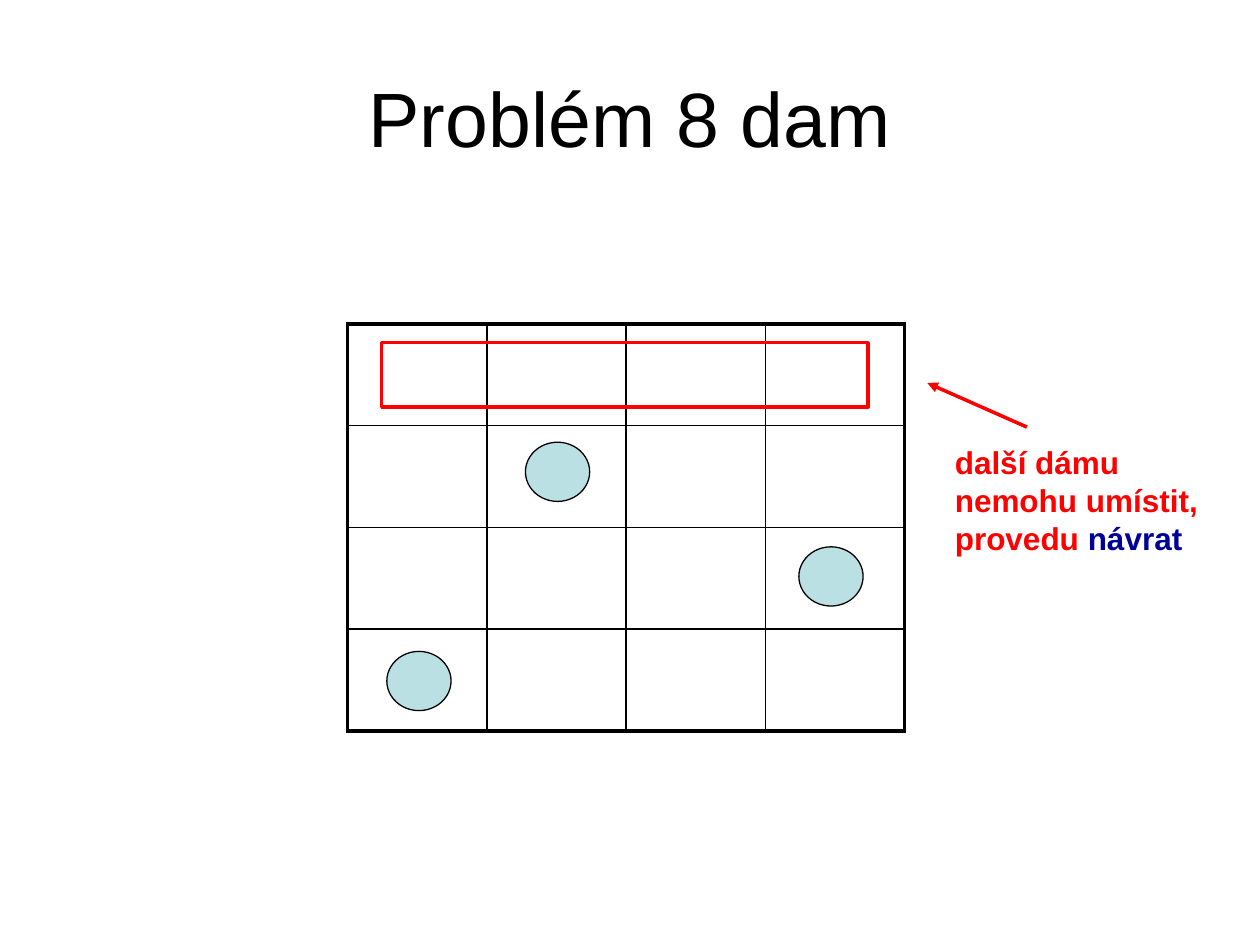
from lxml import etree
from pptx import Presentation
from pptx.dml.color import RGBColor
from pptx.enum import shapes, text
from pptx.oxml import ns
from pptx.util import Inches, Pt

BLACK, RED, NAVY, QUEEN = "000000", "FF0000", "000099", "BBE0E3"
SIZE = 4


def paint(color_format, color):
    color_format.rgb = RGBColor.from_string(color)


def add_child(parent, tag, **attributes):
    return etree.SubElement(parent, ns.qn(tag), attributes)


presentation = Presentation()
presentation.slide_width, presentation.slide_height = Inches(10), Inches(7.5)
slide = presentation.slides.add_slide(presentation.slide_layouts[6])

# Title
title = slide.shapes.add_textbox(Inches(0.5), Inches(0.3), Inches(9), Inches(1.25))
title.text_frame.word_wrap = True
title.text_frame.vertical_anchor = text.MSO_ANCHOR.MIDDLE
title.text_frame.text = "Problém 8 dam"
paragraph = title.text_frame.paragraphs[0]
paragraph.alignment = text.PP_ALIGN.CENTER
font = paragraph.runs[0].font
font.name, font.size = "Arial", Pt(44)
paint(font.color, BLACK)

# Chessboard with a thick outer border
board = slide.shapes.add_table(
    SIZE, SIZE, Inches(2.76), Inches(2.57), Inches(4.42), Inches(3.23)).table
board.first_row = board.horz_banding = False
for row in range(SIZE):
    for column in range(SIZE):
        cell = board.cell(row, column)
        properties = cell._tc.get_or_add_tcPr()
        outer_sides = {"a:lnL": column == 0, "a:lnR": column == SIZE - 1,
                       "a:lnT": row == 0, "a:lnB": row == SIZE - 1}
        for side, is_outer in outer_sides.items():
            border = add_child(properties, side, w=str(Pt(2.25 if is_outer else 1)))
            add_child(add_child(border, "a:solidFill"), "a:srgbClr", val=BLACK)
        cell.fill.background()

# Queens placed so far
for left, top in [(3.07, 5.17), (6.34, 4.34), (4.17, 3.51)]:
    queen = slide.shapes.add_shape(
        shapes.MSO_SHAPE.OVAL, Inches(left), Inches(top), Inches(0.51), Inches(0.47))
    queen.shadow.inherit = False
    queen.fill.solid()
    paint(queen.fill.fore_color, QUEEN)
    paint(queen.line.color, BLACK)
    queen.line.width = Pt(0.75)

# Frame around the blocked row
frame = slide.shapes.add_shape(
    shapes.MSO_SHAPE.RECTANGLE, Inches(3.03), Inches(2.72), Inches(3.86), Inches(0.51))
frame.shadow.inherit = False
frame.fill.background()
paint(frame.line.color, RED)
frame.line.width = Pt(2)

# Comment on the blocked row
comment = slide.shapes.add_textbox(Inches(7.48), Inches(3.47), Inches(2.13), Inches(1.3))
comment.text_frame.word_wrap = True
paragraph = comment.text_frame.paragraphs[0]
for words, color in [("další dámu nemohu umístit, provedu ", RED), ("návrat", NAVY)]:
    run = paragraph.add_run()
    run.text = words
    run.font.name, run.font.size, run.font.bold = "Arial", Pt(18), True
    paint(run.font.color, color)

# Arrow from the comment to the row
arrow = slide.shapes.add_connector(
    shapes.MSO_CONNECTOR.STRAIGHT, Inches(8.15), Inches(3.39), Inches(7.36), Inches(3.04))
paint(arrow.line.color, RED)
arrow.line.width = Pt(2)
add_child(arrow.line._get_or_add_ln(), "a:tailEnd", type="triangle")
add_child(arrow._element.spPr, "a:effectLst")

presentation.save("out.pptx")
